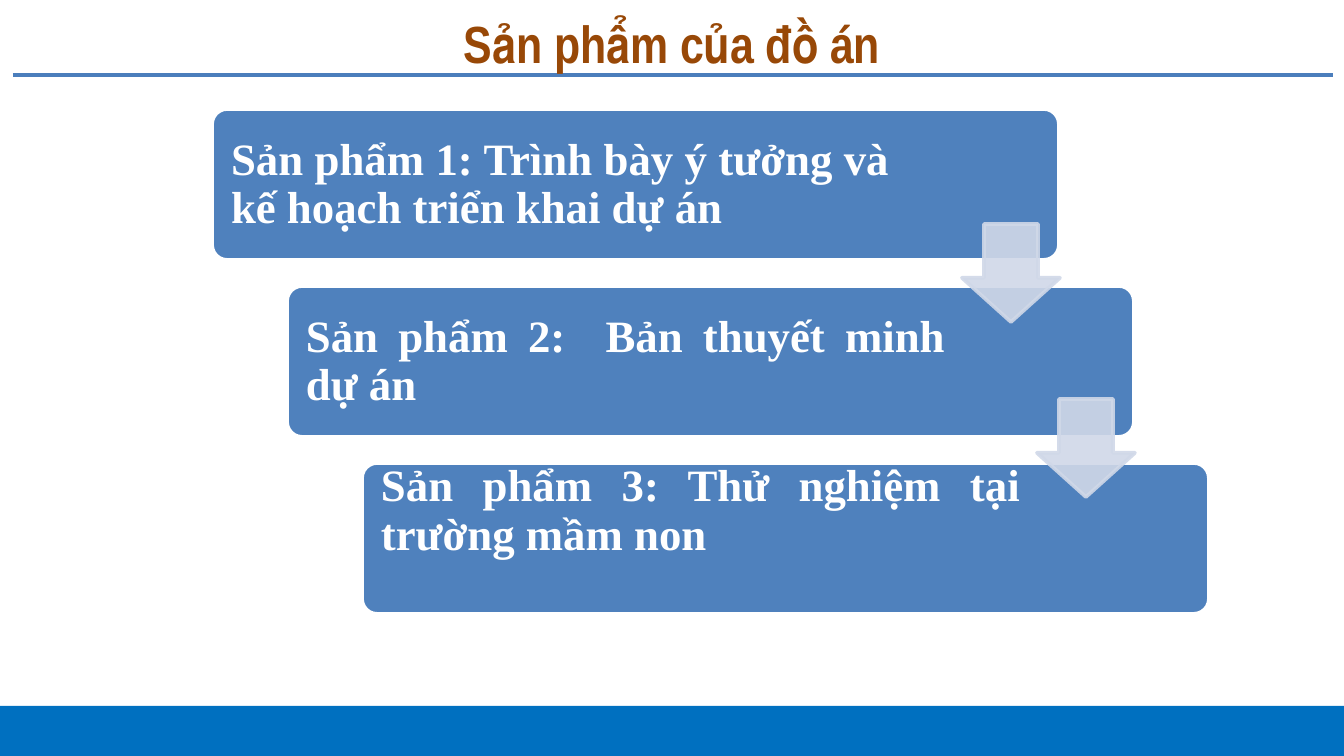
from lxml import etree
from pptx import Presentation
from pptx.dml.color import RGBColor
from pptx.enum.shapes import MSO_CONNECTOR, MSO_SHAPE
from pptx.enum.text import MSO_ANCHOR, PP_ALIGN
from pptx.oxml.ns import qn
from pptx.util import Emu, Pt

RECT, ROUND, ARROW = MSO_SHAPE.RECTANGLE, MSO_SHAPE.ROUNDED_RECTANGLE, MSO_SHAPE.DOWN_ARROW
LINE = MSO_CONNECTOR.STRAIGHT
MIDDLE = MSO_ANCHOR.MIDDLE
CENTER, JUSTIFY = PP_ALIGN.CENTER, PP_ALIGN.JUSTIFY

# Content
TITLE = "Sản phẩm của đồ án"
# text, width of its box, top and bottom insets
STEPS = [
    ("Sản phẩm 1: Trình bày ý tưởng và kế hoạch triển khai dự án", 684, 13, 13),
    ("Sản phẩm 2:  Bản thuyết minh dự án", 665, 13, 13),
    ("Sản phẩm 3: Thử nghiệm tại trường mầm non", 665, 0, 55),
]

THEME = {
    "footer": "0070C0", "rule": "4B7EBC", "title": "984807",
    "card": "4F81BD", "white": "FFFFFF", "arrow": "D0D8E8",
    "head": ("Arial Narrow", 28), "body": ("Times New Roman", 24),
    "stroke": 2, "alpha": 90,
}

# Layout in px
SCALE = 914400 / 134.4
WIDE, HIGH = 1344, 756
CARD = (212, 109, 847, 151)
CARD_STEP = (75, 177)
LABEL = (218, 114, 142)  # left, top, height
MARK = (962, 224, 98, 98)
MARK_STEP = (75, 175)


def px(n):
    return Emu(round(n * SCALE))


def tint(name):
    return RGBColor.from_string(THEME[name])


def shift(start, step, i):
    return start[0] + i * step[0], start[1] + i * step[1]


def add_box(slide, kind, box, fill, line=None):
    shape = slide.shapes.add_shape(kind, *map(px, box))
    shape.shadow.inherit = False
    shape.fill.solid()
    shape.fill.fore_color.rgb = tint(fill)
    if line:
        shape.line.color.rgb = tint(line)
        shape.line.width = Pt(THEME["stroke"])
    else:
        shape.line.fill.background()
    return shape


def add_text(slide, box, text, font, color, align):
    frame = slide.shapes.add_textbox(*map(px, box)).text_frame
    frame.word_wrap = True
    frame.vertical_anchor = MIDDLE
    frame.text = text
    para = frame.paragraphs[0]
    para.alignment = align
    face = para.runs[0].font
    face.name, size = THEME[font]
    face.size = Pt(size)
    face.bold = True
    face.color.rgb = tint(color)
    return frame


def fade(shape):
    for color in shape._element.spPr.iter(qn("a:srgbClr")):
        etree.SubElement(color, qn("a:alpha")).set("val", str(THEME["alpha"] * 1000))


deck = Presentation()
deck.slide_width, deck.slide_height = px(WIDE), px(HIGH)
slide = deck.slides.add_slide(deck.slide_layouts[6])

# Footer, rule and title
add_box(slide, RECT, (-5, 706, WIDE + 10, 50), "footer")
rule = slide.shapes.add_connector(LINE, px(13), px(75), px(1333), px(75))
rule.line.color.rgb = tint("rule")
rule.line.width = Pt(THEME["stroke"])
etree.SubElement(rule._element.spPr, qn("a:effectLst"))
add_text(slide, (22, 8, 1300, 69), TITLE, "head", "title", CENTER)

# Stepped cards
for i, (text, width, top, low) in enumerate(STEPS):
    card = add_box(slide, ROUND, (*shift(CARD, CARD_STEP, i), *CARD[2:]), "card", "white")
    card.adjustments[0] = 0.1
    box = (*shift(LABEL, CARD_STEP, i), width, LABEL[2])
    frame = add_text(slide, box, text, "body", "white", JUSTIFY)
    frame.paragraphs[0].line_spacing = 0.9
    frame.margin_left = frame.margin_right = px(13)
    frame.margin_top, frame.margin_bottom = px(top), px(low)

# Arrows between cards
for i in range(len(STEPS) - 1):
    mark = add_box(slide, ARROW, (*shift(MARK, MARK_STEP, i), *MARK[2:]), "arrow", "arrow")
    mark.adjustments[0], mark.adjustments[1] = 0.55, 0.45
    fade(mark)

deck.save("out.pptx")
